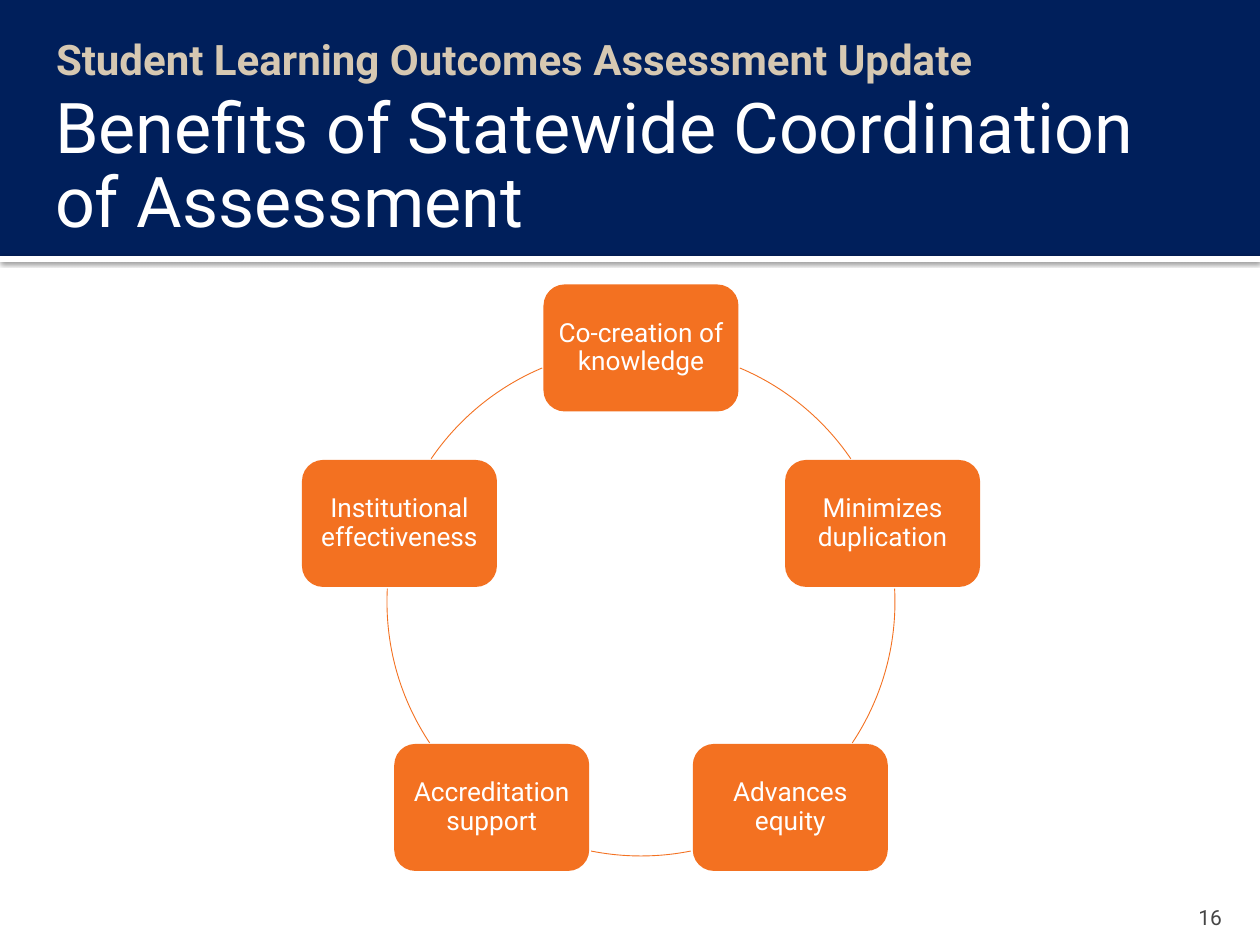
import math

from lxml import etree
from pptx import Presentation
from pptx import util as u
from pptx.dml.color import RGBColor
from pptx.enum import shapes, text
from pptx.oxml import ns

NAVY = RGBColor(0x00, 0x1F, 0x5B)
ORANGE = RGBColor(0xF3, 0x71, 0x21)
SAND = RGBColor(0xD6, 0xC8, 0xB2)
WHITE = RGBColor(0xFF, 0xFF, 0xFF)
GRAY = RGBColor(0x45, 0x45, 0x45)

PX_PER_INCH = 126
WIDTH, HEIGHT = 1260, 945


def px(value):
    return u.Emu(round(value * u.Inches(1) / PX_PER_INCH))


def write(shape, words, size, color, bold=False, align=text.PP_ALIGN.LEFT,
          anchor=text.MSO_ANCHOR.TOP, insets=(0, 0, 0, 0), spacing=None):
    """Fill a shape with one formatted paragraph; insets are left, top, right, bottom."""
    frame = shape.text_frame
    frame.word_wrap = True
    frame.auto_size = text.MSO_AUTO_SIZE.NONE
    frame.vertical_anchor = anchor
    (frame.margin_left, frame.margin_top,
     frame.margin_right, frame.margin_bottom) = map(px, insets)
    para = frame.paragraphs[0]
    para.alignment = align
    para.line_spacing = spacing
    span = para.add_run()
    span.text = words
    font = span.font
    font.name, font.size, font.bold = "Roboto", u.Pt(size), bold
    font.color.rgb = color


class Painter:
    def __init__(self, slide):
        self.slide = slide

    def block(self, kind, left, top, width, height, fill):
        shape = self.slide.shapes.add_shape(kind, *map(px, (left, top, width, height)))
        shape.shadow.inherit = False
        shape.fill.solid()
        shape.fill.fore_color.rgb = fill
        shape.line.fill.background()
        return shape

    def drop_shadow(self, shape):
        effects = shape.element.spPr.find(ns.qn("a:effectLst"))
        shadow = etree.SubElement(
            effects, ns.qn("a:outerShdw"), blurRad=str(u.Pt(2.5)),
            dist=str(u.Pt(0.8)), dir="5400000", rotWithShape="0")
        color = etree.SubElement(shadow, ns.qn("a:srgbClr"), val="000000")
        etree.SubElement(color, ns.qn("a:alpha"), val="60000")

    def label(self, left, top, width, height, words, **style):
        box = self.slide.shapes.add_textbox(*map(px, (left, top, width, height)))
        write(box, words, **style)

    def title(self, left, top, width, height, words, **style):
        title = self.slide.shapes.title
        title.left, title.top, title.width, title.height = map(
            px, (left, top, width, height))
        write(title, words, **style)
        # Bring the title in front of the header band
        title.element.getparent().append(title.element)

    def arc(self, center_x, center_y, radius, start, end):
        arc = self.slide.shapes.add_shape(
            shapes.MSO_SHAPE.ARC, px(center_x - radius), px(center_y - radius),
            px(2 * radius), px(2 * radius))
        arc.shadow.inherit = False
        arc.fill.background()
        arc.line.color.rgb = ORANGE
        arc.line.width = u.Pt(0.5)
        # Angles are stored in 1/60000 degree, adjustments in 1/100000
        arc.adjustments[0] = start % 360 * 0.6
        arc.adjustments[1] = end % 360 * 0.6


def draw_cycle(painter):
    center_x, center_y, radius = 641, 602, 254
    width, height = 195, 127
    # Each benefit with the start and end angle of the arc that follows it
    benefits = [
        ("Co-creation of knowledge", -67.1, -34.3),
        ("Minimizes duplication", -3, 33.7),
        ("Advances equity", 78.7, 101.3),
        ("Accreditation support", 146.3, 183),
        ("Institutional effectiveness", 214.3, 247.1),
    ]
    for index, (words, start, end) in enumerate(benefits):
        angle = math.radians(index * 360 / len(benefits) - 90)
        box = painter.block(
            shapes.MSO_SHAPE.ROUNDED_RECTANGLE,
            center_x + radius * math.cos(angle) - width / 2,
            center_y + radius * math.sin(angle) - height / 2,
            width, height, ORANGE)
        write(box, words, size=15, color=WHITE, align=text.PP_ALIGN.CENTER,
              anchor=text.MSO_ANCHOR.MIDDLE, insets=(8, 8, 8, 8), spacing=0.9)
        painter.arc(center_x, center_y, radius, start, end)


def main():
    deck = Presentation()
    deck.slide_width, deck.slide_height = px(WIDTH), px(HEIGHT)
    page = deck.slides.add_slide(deck.slide_layouts.get_by_name("Title Only"))
    painter = Painter(page)

    # Header band with a shadowed white rule
    painter.block(shapes.MSO_SHAPE.RECTANGLE, 0, 0, WIDTH, 262, NAVY)
    rule = painter.block(shapes.MSO_SHAPE.RECTANGLE, 0, 256, WIDTH, 6, WHITE)
    painter.drop_shadow(rule)

    # Slide number
    painter.label(1134, 892, 101, 38, "16", size=12, color=GRAY,
                  align=text.PP_ALIGN.RIGHT, anchor=text.MSO_ANCHOR.BOTTOM,
                  insets=(13, 6, 13, 0))

    # Cycle of benefits
    draw_cycle(painter)

    # Header text
    painter.label(32, 21, 1177, 63, "Student Learning Outcomes Assessment Update",
                  size=24, color=SAND, bold=True, insets=(24, 13, 13, 6))
    painter.title(42, 84, 1155, 168,
                  "Benefits of Statewide Coordination of Assessment",
                  size=40, color=WHITE, anchor=text.MSO_ANCHOR.MIDDLE,
                  insets=(13, 6, 6, 6), spacing=u.Pt(42))

    deck.save("out.pptx")


if __name__ == "__main__":
    main()
